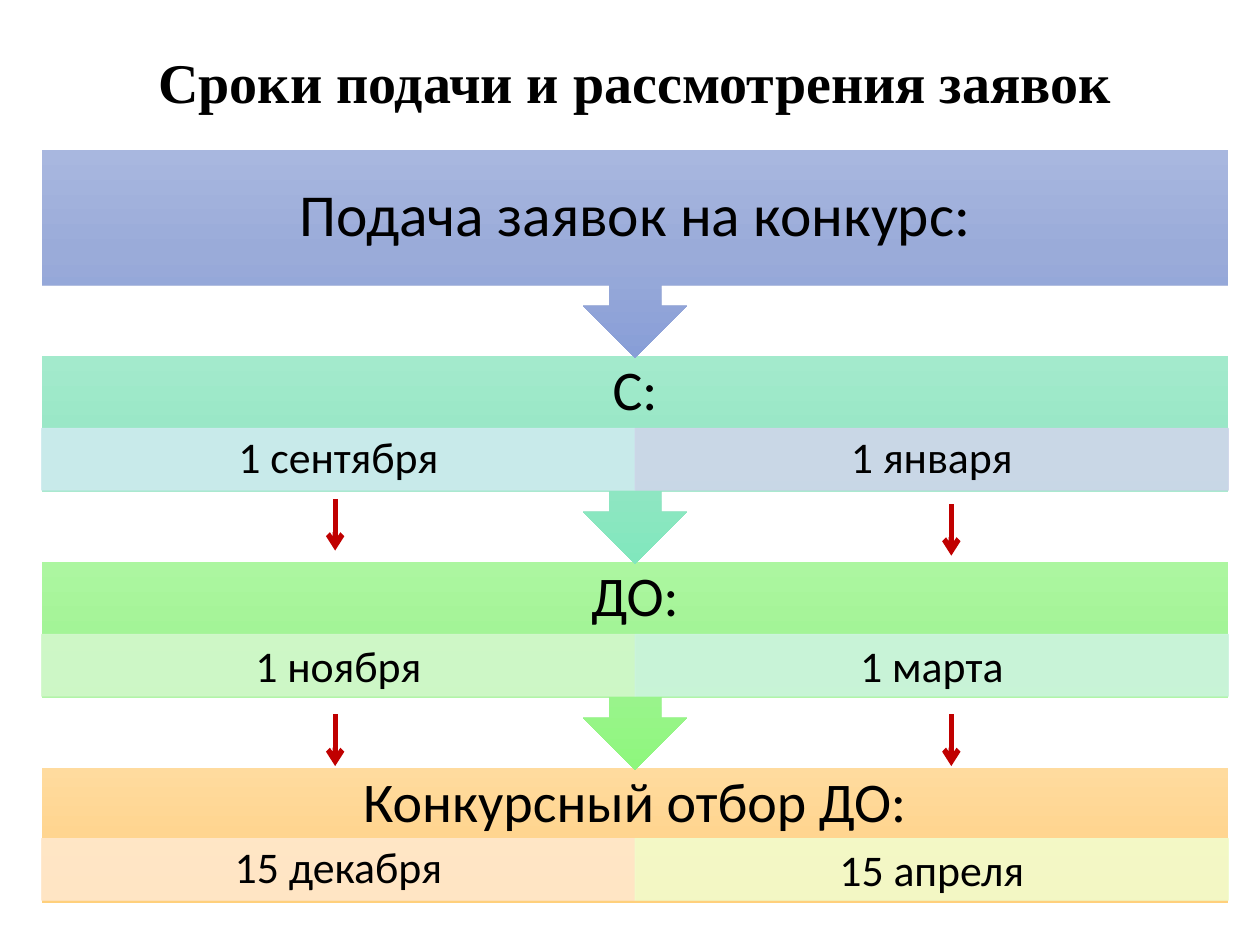
from copy import deepcopy

from lxml import etree
from pptx import Presentation
from pptx.dml.color import RGBColor
from pptx.enum.shapes import MSO_CONNECTOR, MSO_SHAPE
from pptx.enum.text import MSO_ANCHOR, PP_ALIGN
from pptx.oxml.ns import qn
from pptx.util import Inches, Pt

RECTANGLE, CALLOUT = MSO_SHAPE.RECTANGLE, MSO_SHAPE.DOWN_ARROW_CALLOUT
STRAIGHT = MSO_CONNECTOR.STRAIGHT
MIDDLE, CENTER = MSO_ANCHOR.MIDDLE, PP_ALIGN.CENTER

BLACK = RGBColor(0x00, 0x00, 0x00)
RED = RGBColor(0xC0, 0x00, 0x00)
BLUES = [RGBColor(0xA8, 0xB7, 0xDF), RGBColor(0x9A, 0xAB, 0xD9), RGBColor(0x88, 0x9E, 0xD7)]
TEALS = [RGBColor(0xA3, 0xEA, 0xCC), RGBColor(0x95, 0xE6, 0xC4), RGBColor(0x81, 0xE7, 0xBD)]
GREENS = [RGBColor(0xAC, 0xF6, 0xA0), RGBColor(0x9F, 0xF3, 0x92), RGBColor(0x8E, 0xF7, 0x7D)]
ORANGES = [RGBColor(0xFF, 0xDB, 0x9E), RGBColor(0xFF, 0xD5, 0x90), RGBColor(0xFF, 0xD0, 0x7C)]
PALE_CYAN = RGBColor(0xCE, 0xEB, 0xEF)
PALE_BLUE = RGBColor(0xCF, 0xD6, 0xEA)
PALE_GREEN = RGBColor(0xD3, 0xF8, 0xCC)
PALE_MINT = RGBColor(0xCD, 0xF4, 0xDF)
PALE_ORANGE = RGBColor(0xFF, 0xE8, 0xCC)
PALE_YELLOW = RGBColor(0xF2, 0xFC, 0xCC)

LEFT, WIDTH = 0.33, 9.42
FIRST_TOP, STEP = 1.19, 1.635
CALLOUT_HEIGHT, BODY_HEIGHT = 1.65, 1.07
DATE_HEIGHT = 0.49

# Stage: heading, size, gradient, dates (text, fill, line spacing)
STAGES = [
    ("Подача заявок на конкурс:", 34, BLUES, []),
    ("С:", 32, TEALS, [("1 сентября", PALE_CYAN, 0.9), ("1 января", PALE_BLUE, 0.9)]),
    ("ДО:", 32, GREENS, [("1 ноября", PALE_GREEN, 1.0), ("1 марта", PALE_MINT, 1.0)]),
    ("Конкурсный отбор ДО:", 32, ORANGES,
     [("15 декабря", PALE_ORANGE, 0.9), ("15 апреля", PALE_YELLOW, 1.0)]),
]
ARROWS = [(2.66, 3.96), (7.55, 4.0), (2.66, 5.67), (7.55, 5.67)]


def write(shape, text, size, spacing=1.0, bottom=0, font="Calibri", bold=False):
    frame = shape.text_frame
    frame_format = {"word_wrap": True, "vertical_anchor": MIDDLE, "margin_left": 0,
                    "margin_right": 0, "margin_top": 0, "margin_bottom": Inches(bottom)}
    for name, value in frame_format.items():
        setattr(frame, name, value)
    para = frame.paragraphs[0]
    para.text = text
    para.alignment = CENTER
    para.line_spacing = spacing
    for name, value in {"name": font, "size": Pt(size), "bold": bold}.items():
        setattr(para.font, name, value)
    para.font.color.rgb = BLACK


deck = Presentation()
deck.slide_width, deck.slide_height = Inches(10), Inches(7.5)
slide = deck.slides.add_slide(deck.slide_layouts[5])

# Title
title = slide.shapes.title
title.left, title.top = Inches(LEFT), Inches(0.26)
title.width, title.height = Inches(WIDTH), Inches(0.77)
write(title, "Сроки подачи и рассмотрения заявок", 32, font="Times New Roman", bold=True)

# Stages, bottom first so that each arrow tip lies over the next stage
last = len(STAGES) - 1
for index, (heading, size, colors, dates) in reversed(list(enumerate(STAGES))):
    top = FIRST_TOP + index * STEP
    kind, height = (RECTANGLE, BODY_HEIGHT) if index == last else (CALLOUT, CALLOUT_HEIGHT)
    stage = slide.shapes.add_shape(kind, Inches(LEFT), Inches(top), Inches(WIDTH), Inches(height))
    stage.shadow.inherit = False
    stage.line.fill.background()
    stage.fill.gradient()
    stage.fill.gradient_angle = 270
    stop_list = stage.fill.gradient_stops[0]._gs.getparent()
    stop_list.insert(1, deepcopy(stop_list[0]))
    for stop, position, color in zip(stage.fill.gradient_stops, (0, 0.5, 1), colors):
        stop.position = position
        stop.color.rgb = color
    write(stage, heading, size, 0.9, bottom=DATE_HEIGHT if dates else 0)

    # Two dates along the lower edge of the stage
    date_top = top + (0.56 if index == last else 0.575)
    for column, (text, color, spacing) in enumerate(dates):
        date = slide.shapes.add_shape(
            RECTANGLE, Inches(LEFT + column * WIDTH / 2), Inches(date_top),
            Inches(WIDTH / 2), Inches(DATE_HEIGHT))
        date.shadow.inherit = False
        date.fill.solid()
        date.fill.fore_color.rgb = color
        date.line.color.rgb = color
        date.line.width = Pt(0.5)
        for color_element in date._element.spPr.iter(qn("a:srgbClr")):
            etree.SubElement(color_element, qn("a:alpha"), val="90000")
        write(date, text, 25, spacing)

# Red arrows between the dates
for x, y in ARROWS:
    arrow = slide.shapes.add_connector(STRAIGHT, Inches(x), Inches(y), Inches(x), Inches(y + 0.41))
    arrow.line.color.rgb = RED
    arrow.line.width = Pt(3)
    etree.SubElement(arrow.line._get_or_add_ln(), qn("a:tailEnd"), type="arrow")
    etree.SubElement(arrow._element.spPr, qn("a:effectLst"))

deck.save("out.pptx")
